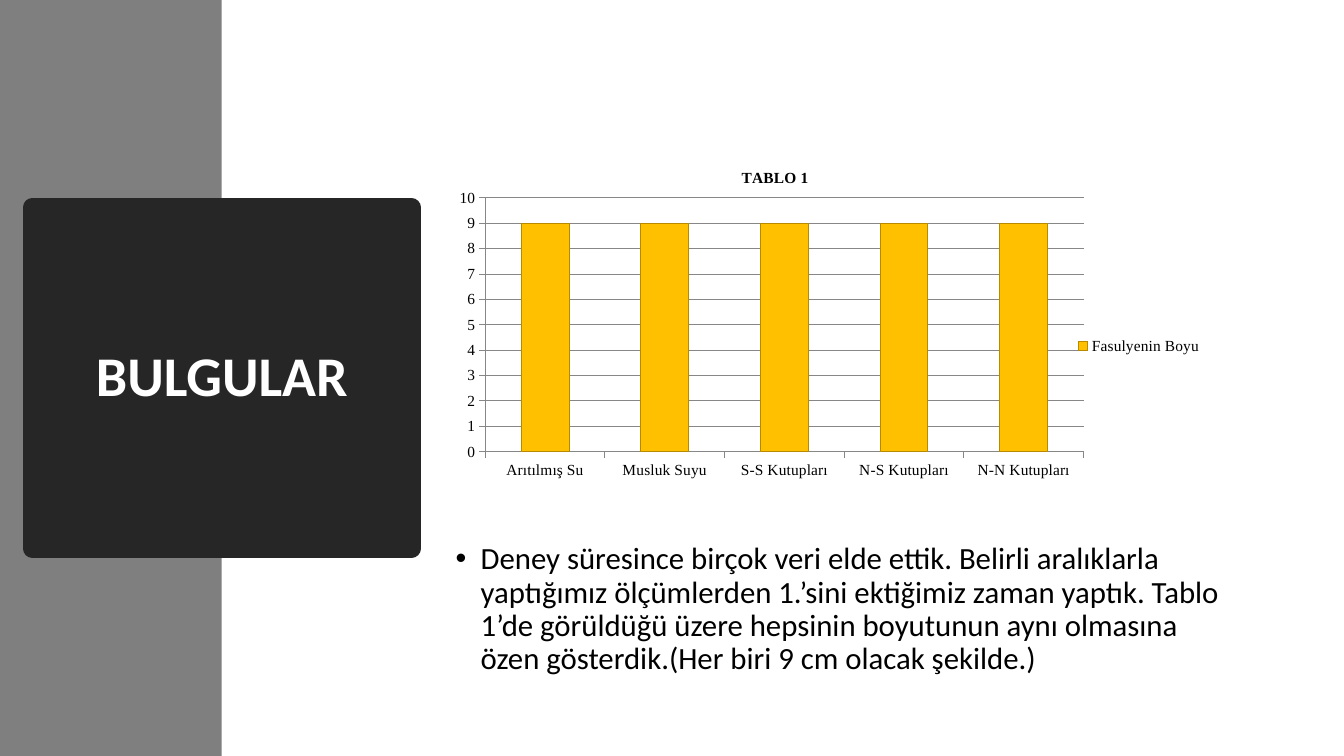
from lxml import etree
from pptx import Presentation
from pptx.chart.data import CategoryChartData
from pptx.dml.color import RGBColor
from pptx.enum.chart import XL_CHART_TYPE, XL_LEGEND_POSITION, XL_TICK_MARK
from pptx.enum.shapes import MSO_SHAPE
from pptx.enum.text import MSO_ANCHOR, PP_ALIGN
from pptx.oxml.ns import qn
from pptx.util import Inches, Pt

STACKED = XL_CHART_TYPE.COLUMN_STACKED
RIGHT = XL_LEGEND_POSITION.RIGHT
OUTSIDE = XL_TICK_MARK.OUTSIDE
RECTANGLE = MSO_SHAPE.RECTANGLE
MIDDLE, TOP = MSO_ANCHOR.MIDDLE, MSO_ANCHOR.TOP
CENTER = PP_ALIGN.CENTER

HEADING = "BULGULAR"
FINDING = (
    "Deney süresince birçok veri elde ettik. Belirli aralıklarla yaptığımız "
    "ölçümlerden 1.’sini ektiğimiz zaman yaptık. Tablo 1’de görüldüğü üzere "
    "hepsinin boyutunun aynı olmasına özen gösterdik.(Her biri 9 cm olacak şekilde.)"
)
CHART_TITLE = "TABLO 1"
SERIES = "Fasulyenin Boyu"
HEIGHTS = {
    "Arıtılmış Su": 9,
    "Musluk Suyu": 9,
    "S-S Kutupları": 9,
    "N-S Kutupları": 9,
    "N-N Kutupları": 9,
}

SLIDE_W, SLIDE_H = 13.33, 7.5
BAND_W = 2.2
PANEL_H = 3.38
CONTENT_X, CONTENT_W = 4.42, 7.86
PANEL_BOX = (0.32, (SLIDE_H - PANEL_H) / 2, 3.76, PANEL_H)
CHART_BOX = (CONTENT_X, 1.44, CONTENT_W, PANEL_H)
FINDING_BOX = (CONTENT_X, 5.34, CONTENT_W, 1.41)

# Shares of the chart's own width and height
PLOT_SHARE = {"x": 0.05, "y": 0.155, "w": 0.755, "h": 0.745}
CHART_TITLE_SHARE = {"x": 0.37, "y": 0.06}
LEGEND_SHARE = {"x": 0.79, "y": 0.55, "w": 0.17, "h": 0.08}

HEADING_FONT = {"name": "Calibri", "size": Pt(40), "bold": True}
FINDING_FONT = {"name": "Calibri", "size": Pt(22)}
CHART_FONT = {"name": "Times New Roman", "size": Pt(11)}
CHART_TITLE_FONT = {**CHART_FONT, "bold": True}


def box(lengths):
    return [Inches(length) for length in lengths]


def paint(colored, hex_color):
    """Colour a fill, or a font or line through its fill."""
    fill = colored if hasattr(colored, "solid") else colored.fill
    fill.solid()
    fill.fore_color.rgb = RGBColor.from_string(hex_color)


def style(target, formats):
    for name, value in formats.items():
        setattr(target, name, value)


def place(part, shares, after=None):
    """Give a chart part a manual layout, directly after the named child."""
    for old in part.findall(qn("c:layout")):
        part.remove(old)
    layout = etree.Element(qn("c:layout"))
    manual = etree.SubElement(layout, qn("c:manualLayout"))
    settings = {"xMode": "edge", "yMode": "edge", **shares}
    if "w" in shares and after is None:
        settings = {"layoutTarget": "inner", **settings}
    for tag, value in settings.items():
        etree.SubElement(manual, qn("c:" + tag)).set("val", str(value))
    if after is None:
        part.insert(0, layout)
    else:
        part.find(qn(after)).addnext(layout)


def add_heading(slide):
    band = slide.shapes.add_shape(RECTANGLE, *box((0, 0, BAND_W, SLIDE_H)))
    paint(band.fill, "7F7F7F")
    band.line.fill.background()
    band.shadow.inherit = False

    panel = slide.shapes.title
    panel._element.addprevious(band._element)
    style(panel, dict(zip(("left", "top", "width", "height"), box(PANEL_BOX))))
    paint(panel.fill, "262626")
    paint(panel.line, "262626")
    panel.line.width = Pt(13.75)
    style(panel.text_frame, {"text": HEADING, "vertical_anchor": MIDDLE, "word_wrap": True})
    paragraph = panel.text_frame.paragraphs[0]
    style(paragraph, {"alignment": CENTER, "line_spacing": 0.9})
    font = paragraph.runs[0].font
    style(font, HEADING_FONT)
    paint(font, "FFFFFF")


def add_finding(slide):
    frame = slide.shapes.add_textbox(*box(FINDING_BOX)).text_frame
    style(frame, {"text": FINDING, "word_wrap": True, "vertical_anchor": TOP})
    paragraph = frame.paragraphs[0]
    style(paragraph, {"line_spacing": 0.9, "space_before": Pt(10)})
    font = paragraph.runs[0].font
    style(font, FINDING_FONT)
    paint(font, "000000")
    properties = paragraph._p.get_or_add_pPr()
    properties.set("marL", str(Inches(0.25)))
    properties.set("indent", str(Inches(-0.25)))
    etree.SubElement(properties, qn("a:buFont")).set("typeface", "Arial")
    etree.SubElement(properties, qn("a:buChar")).set("char", "•")


def add_height_chart(slide):
    data = CategoryChartData()
    data.categories = list(HEIGHTS)
    data.add_series(SERIES, list(HEIGHTS.values()))
    chart = slide.shapes.add_chart(STACKED, *box(CHART_BOX), data).chart
    style(chart.font, CHART_FONT)
    paint(chart.font, "000000")

    chart.has_title = True
    chart.chart_title.text_frame.text = CHART_TITLE
    title_font = chart.chart_title.text_frame.paragraphs[0].runs[0].font
    style(title_font, CHART_TITLE_FONT)
    paint(title_font, "000000")

    chart.has_legend = True
    style(chart.legend, {"position": RIGHT, "include_in_layout": False})

    plot = chart.plots[0]
    style(plot, {"gap_width": 150, "overlap": 100, "vary_by_categories": False})
    columns = plot.series[0].format
    paint(columns.fill, "FFC000")
    paint(columns.line, "B88A00")
    columns.line.width = Pt(0.75)

    heights = chart.value_axis
    style(heights, {"minimum_scale": 0, "maximum_scale": 10, "major_unit": 1,
                    "has_major_gridlines": True})
    for axis in (chart.category_axis, heights):
        axis.major_tick_mark = OUTSIDE
    for ruled in (chart.category_axis, heights, heights.major_gridlines):
        paint(ruled.format.line, "878787")
        ruled.format.line.width = Pt(0.75)

    place(plot._element.getparent(), PLOT_SHARE)
    place(chart.chart_title._element, CHART_TITLE_SHARE, after="c:tx")
    place(chart.legend._element, LEGEND_SHARE, after="c:legendPos")


def main():
    deck = Presentation()
    deck.slide_width, deck.slide_height = box((SLIDE_W, SLIDE_H))
    slide = deck.slides.add_slide(deck.slide_layouts.get_by_name("Title Only"))
    add_heading(slide)
    add_finding(slide)
    add_height_chart(slide)
    deck.save("out.pptx")


if __name__ == "__main__":
    main()
